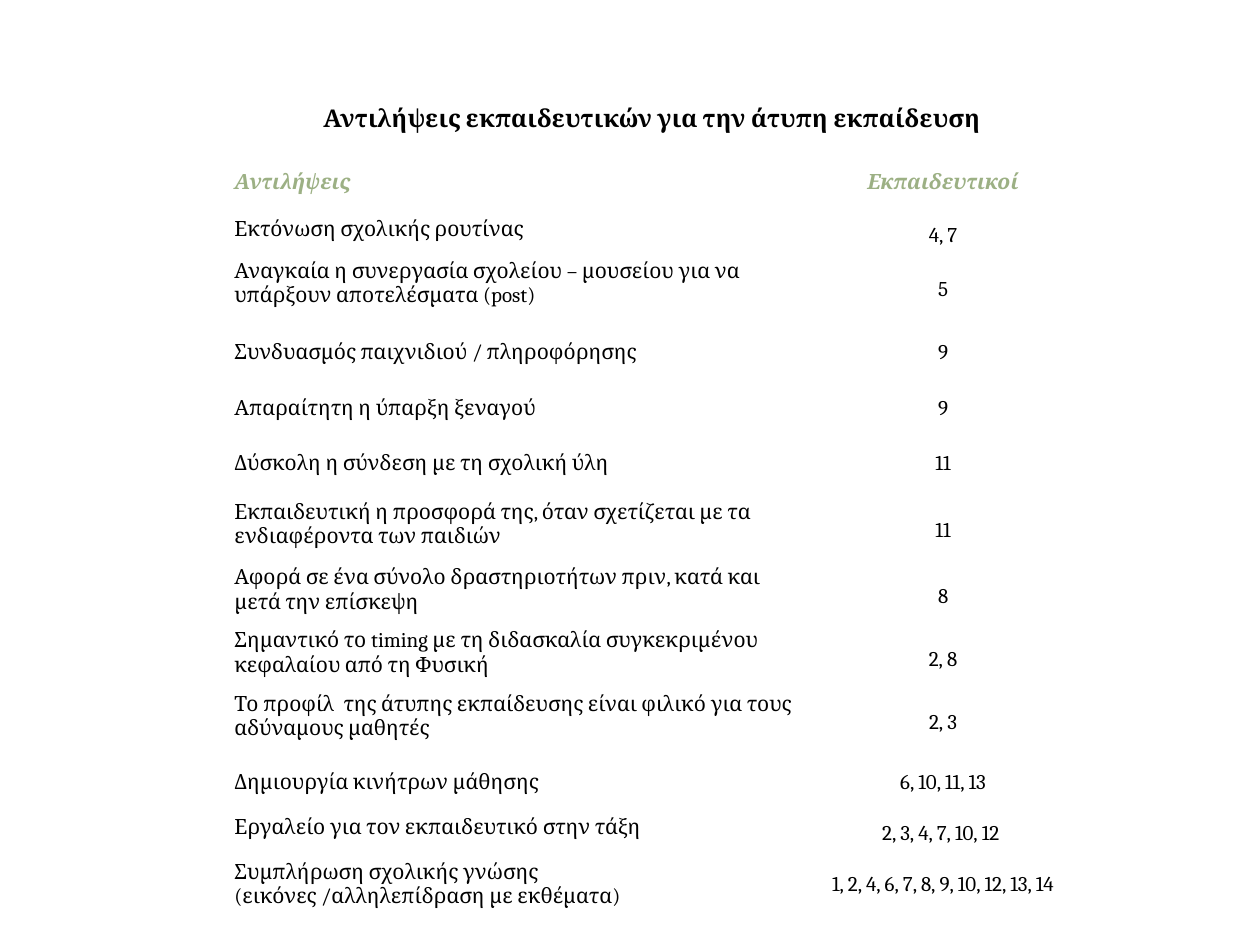
from dataclasses import dataclass

from pptx import Presentation
from pptx import util as u
from pptx.dml.color import RGBColor
from pptx.enum import text


@dataclass(frozen=True)
class Theme:
    font: str = "Cambria"
    ink: RGBColor = RGBColor(0x00, 0x00, 0x00)
    accent: RGBColor = RGBColor(0x9C, 0xB0, 0x84)
    title_size: int = 14
    body_size: int = 12
    loose: float = 1.5
    tight: float = 1.0


HEADING = "Αντιλήψεις εκπαιδευτικών για την άτυπη εκπαίδευση"
COLUMN_HEADS = ("Αντιλήψεις", "Εκπαιδευτικοί")
COLUMN_WIDTHS = (4.62, 2.13)
HEADING_HEIGHT, COLUMN_HEAD_HEIGHT = 0.55, 0.47

# Row height, view lines, teachers, loose spacing of view and of teachers
VIEWS = [
    (0.36, ["Εκτόνωση σχολικής ρουτίνας"], "4, 7", False, True),
    (0.50, ["Αναγκαία η συνεργασία σχολείου – μουσείου για να υπάρξουν αποτελέσματα (post)"],
     "5", False, True),
    (0.51, ["Συνδυασμός παιχνιδιού / πληροφόρησης"], "9", True, True),
    (0.37, ["Απαραίτητη η ύπαρξη ξεναγού"], "9", True, True),
    (0.51, ["Δύσκολη η σύνδεση με τη σχολική ύλη"], "11", True, True),
    (0.55, ["Εκπαιδευτική η προσφορά της, όταν σχετίζεται με τα ενδιαφέροντα των παιδιών"],
     "11", False, True),
    (0.49, ["Αφορά σε ένα σύνολο δραστηριοτήτων πριν, κατά και μετά την επίσκεψη"],
     "8", False, True),
    (0.51, ["Σημαντικό το timing με τη διδασκαλία συγκεκριμένου κεφαλαίου από τη Φυσική"],
     "2, 8", False, True),
    (0.50, ["Το προφίλ  της άτυπης εκπαίδευσης είναι φιλικό για τους αδύναμους μαθητές"],
     "2, 3", False, True),
    (0.45, ["Δημιουργία κινήτρων μάθησης"], "6, 10, 11, 13", True, True),
    (0.36, ["Εργαλείο για τον εκπαιδευτικό στην τάξη"], "2, 3, 4, 7, 10, 12 ", False, True),
    (0.54, ["Συμπλήρωση σχολικής γνώσης", "(εικόνες /αλληλεπίδραση με εκθέματα)"],
     "1, 2, 4, 6, 7, 8, 9, 10, 12, 13, 14", False, False),
]
HEIGHTS = [HEADING_HEIGHT, COLUMN_HEAD_HEIGHT] + [view[0] for view in VIEWS]


class SlideBuilder:
    def __init__(self, slide, theme):
        self.slide = slide
        self.theme = theme

    def table(self, left, top, widths, heights):
        """Add a plain table without banding."""
        grid = self.slide.shapes.add_table(
            len(heights), len(widths), u.Inches(left), u.Inches(top),
            u.Inches(sum(widths)), u.Inches(sum(heights))).table
        grid.first_row = grid.horz_banding = False
        for column, width in zip(grid.columns, widths):
            column.width = u.Inches(width)
        for row, height in zip(grid.rows, heights):
            row.height = u.Inches(height)
        for cell in grid.iter_cells():
            cell.fill.background()
            cell.vertical_anchor = text.MSO_ANCHOR.MIDDLE
            cell.margin_left = cell.margin_right = u.Inches(0.06)
            cell.margin_top = cell.margin_bottom = 0
        return grid

    def cell_text(self, cell, lines, centred=False, loose=True, size=None,
                  color=None, bold=False, italic=False):
        """Fill a cell with one paragraph per line."""
        frame = cell.text_frame
        for index, line in enumerate(lines):
            paragraph = frame.add_paragraph() if index else frame.paragraphs[0]
            paragraph.alignment = text.PP_ALIGN.CENTER if centred else text.PP_ALIGN.LEFT
            paragraph.line_spacing = self.theme.loose if loose else self.theme.tight
            run = paragraph.add_run()
            run.text = line
            run.font.name = self.theme.font
            run.font.size = u.Pt(size or self.theme.body_size)
            run.font.color.rgb = color or self.theme.ink
            run.font.bold = bold
            run.font.italic = italic


def main():
    deck = Presentation()
    deck.slide_width, deck.slide_height = u.Inches(10), u.Inches(7.5)
    theme = Theme()
    blank_layout = deck.slide_layouts[6]
    builder = SlideBuilder(deck.slides.add_slide(blank_layout), theme)
    views = builder.table(1.8, 0.62, COLUMN_WIDTHS, HEIGHTS)

    # Heading across both columns
    views.cell(0, 0).merge(views.cell(0, 1))
    builder.cell_text(views.cell(0, 0), [HEADING], centred=True,
                      size=theme.title_size, bold=True)

    # Column heads
    for column, head in enumerate(COLUMN_HEADS):
        builder.cell_text(views.cell(1, column), [head], centred=column == 1,
                          color=theme.accent, bold=True, italic=True)

    # Views and the teachers who hold them
    for row, (_, lines, teachers, loose_view, loose_teachers) in enumerate(VIEWS, start=2):
        builder.cell_text(views.cell(row, 0), lines, loose=loose_view)
        builder.cell_text(views.cell(row, 1), [teachers], centred=True, loose=loose_teachers)

    deck.save("out.pptx")


if __name__ == "__main__":
    main()
